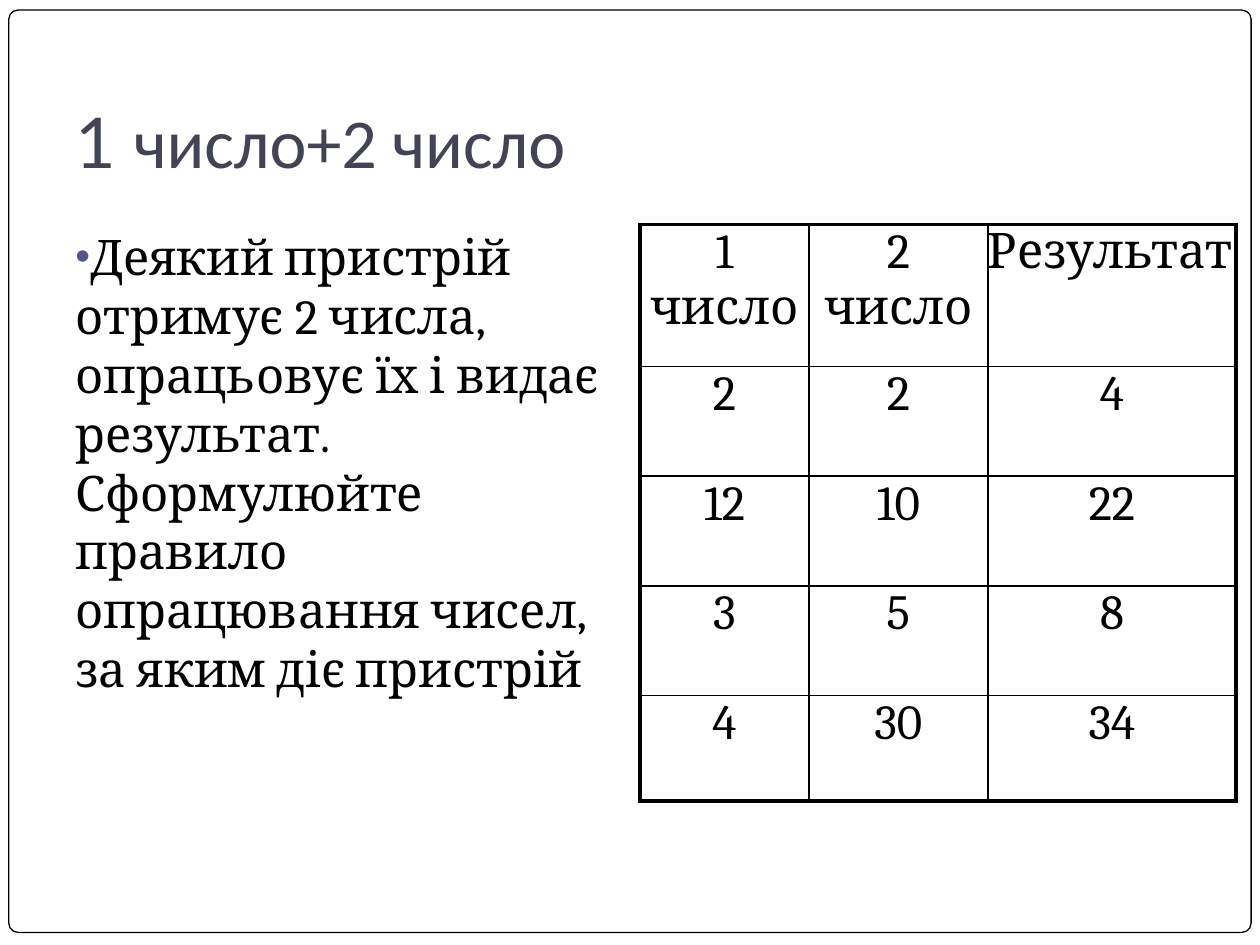
from lxml.etree import SubElement
from pptx import Presentation
from pptx.dml.color import RGBColor
from pptx.enum.shapes import MSO_SHAPE
from pptx.enum.text import MSO_ANCHOR, PP_ALIGN
from pptx.oxml.ns import qn
from pptx.util import Inches, Pt

BLACK = "000000"
ROWS = [
    ("1 число", "2 число", "Результат"),
    ("2", "2", "4"),
    ("12", "10", "22"),
    ("3", "5", "8"),
    ("4", "30", "34"),
]
COL_WIDTHS = (1.34, 1.42, 1.97)
ROW_HEIGHTS = (1.13, 0.87, 0.87, 0.87, 0.84)


def color(value):
    return RGBColor.from_string(value)


def add_run(p, text, font, size, value):
    r = p.add_run()
    r.text = text
    r.font.name = font
    r.font.size = Pt(size)
    r.font.color.rgb = color(value)


def add_text_box(s, x, y, w, h, bottom=0.05):
    tf = s.shapes.add_textbox(Inches(x), Inches(y), Inches(w), Inches(h)).text_frame
    tf.word_wrap = True
    tf.margin_left = tf.margin_right = Inches(0.1)
    tf.margin_top = Inches(0.05)
    tf.margin_bottom = Inches(bottom)
    return tf


def add_frame(s, x, y, w, h):
    sp = s.shapes.add_shape(MSO_SHAPE.ROUNDED_RECTANGLE, Inches(x), Inches(y), Inches(w), Inches(h))
    sp.adjustments[0] = 0.01
    sp.shadow.inherit = False
    sp.fill.solid()
    sp.fill.fore_color.rgb = color("FFFFFF")
    sp.line.color.rgb = color(BLACK)
    sp.line.width = Pt(0.75)


def add_title(s, x, y, w, h):
    tf = add_text_box(s, x, y, w, h, bottom=0.1)
    tf.vertical_anchor = MSO_ANCHOR.BOTTOM
    p = tf.paragraphs[0]
    add_run(p, "1 ", "Lato", 40, "424456")
    add_run(p, "число+2 число", "Calibri", 40, "424456")


def add_bullet(p, char, value, percent):
    pPr = p._p.get_or_add_pPr()
    pPr.set("marL", "0")
    pPr.set("indent", "0")
    SubElement(SubElement(pPr, qn("a:buClr")), qn("a:srgbClr"), val=value)
    SubElement(pPr, qn("a:buSzPct"), val=str(percent * 1000))
    SubElement(pPr, qn("a:buFont"), typeface="Arial")
    SubElement(pPr, qn("a:buChar"), char=char)


def add_task(s, x, y, w, h):
    p = add_text_box(s, x, y, w, h).paragraphs[0]
    p.space_before = Pt(5.8)
    add_bullet(p, "•", "53548A", 86)
    add_run(
        p,
        "Деякий пристрій отримує 2 числа, опрацьовує їх і видає результат. "
        "Сформулюйте правило опрацювання чисел, за яким діє пристрій",
        "Cambria", 28, BLACK,
    )


def set_borders(cell, outer_sides):
    tcPr = cell._tc.get_or_add_tcPr()
    for side in "LRTB":
        width = Pt(2.25 if side in outer_sides else 1)
        ln = SubElement(tcPr, qn(f"a:ln{side}"), w=str(width))
        SubElement(SubElement(ln, qn("a:solidFill")), qn("a:srgbClr"), val=BLACK)


def fill_cell(cell, text, align):
    cell.margin_left = cell.margin_right = cell.margin_top = cell.margin_bottom = 0
    cell.fill.background()
    p = cell.text_frame.paragraphs[0]
    p.alignment = align
    p.space_before = Pt(5.6)
    add_run(p, text, "Cambria", 28, BLACK)


def add_number_table(s, x, y, w, h):
    last_row, last_col = len(ROWS) - 1, len(COL_WIDTHS) - 1
    table = s.shapes.add_table(
        len(ROWS), len(COL_WIDTHS), Inches(x), Inches(y), Inches(w), Inches(h)
    ).table
    table.first_row = table.horz_banding = False
    for col, width in zip(table.columns, COL_WIDTHS):
        col.width = Inches(width)
    for row, height in zip(table.rows, ROW_HEIGHTS):
        row.height = Inches(height)
    for i, values in enumerate(ROWS):
        for j, text in enumerate(values):
            cell = table.cell(i, j)
            edges = {"L": j == 0, "R": j == last_col, "T": i == 0, "B": i == last_row}
            set_borders(cell, [side for side, outer in edges.items() if outer])
            is_result_head = i == 0 and j == last_col
            fill_cell(cell, text, PP_ALIGN.LEFT if is_result_head else PP_ALIGN.CENTER)


def main():
    prs = Presentation()
    prs.slide_width, prs.slide_height = Inches(10), Inches(7.5)
    s = prs.slides.add_slide(prs.slide_layouts[6])
    add_frame(s, 0.07, 0.08, 9.86, 7.32)
    add_title(s, 0.5, 0.3, 9, 1.25)
    add_task(s, 0.5, 1.75, 4.42, 4.95)
    add_number_table(s, 5.08, 1.78, sum(COL_WIDTHS), sum(ROW_HEIGHTS))
    prs.save("out.pptx")


if __name__ == "__main__":
    main()
